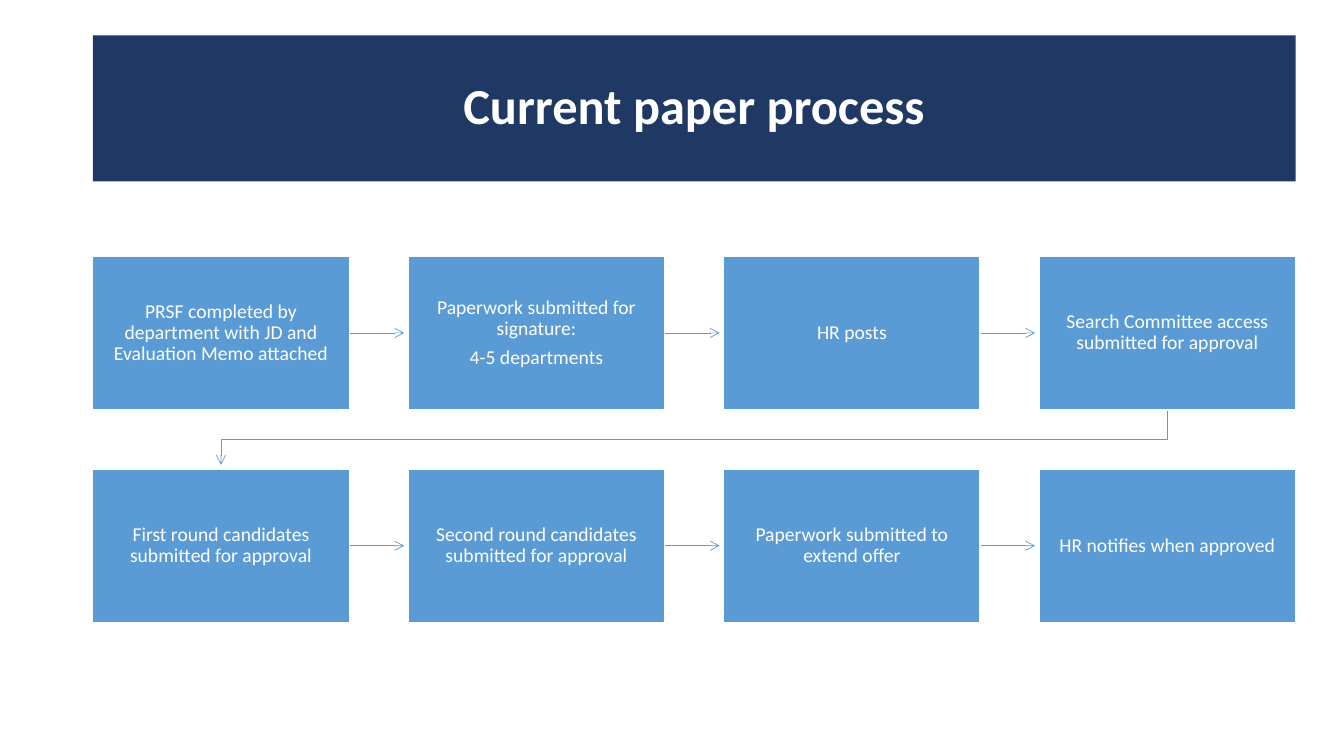
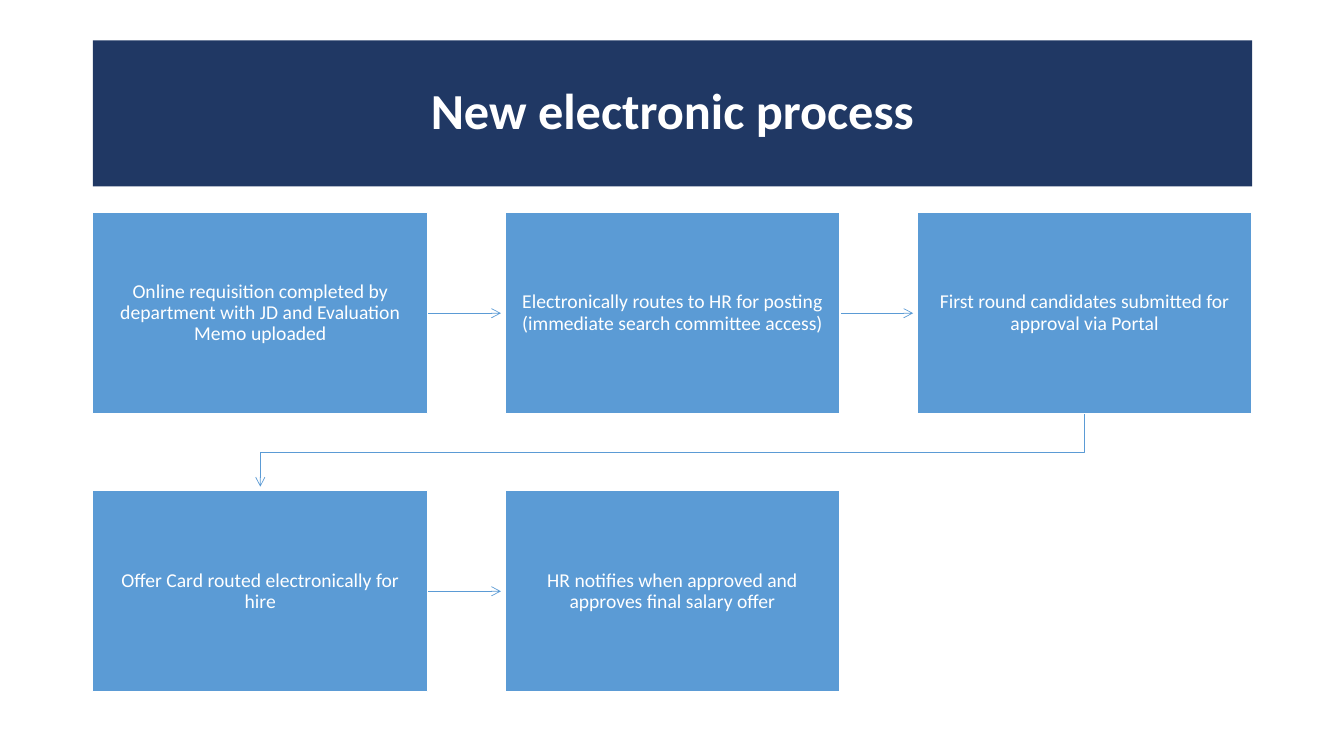
import pptx
import pptx.dml.color
import pptx.enum.shapes
import pptx.enum.text
import pptx.oxml.ns
import pptx.util
from lxml import etree

Inches, Pt = pptx.util.Inches, pptx.util.Pt
Kind = pptx.enum.shapes.MSO_SHAPE
COLORS = {"band": "203864", "step": "5B9BD5", "paper": "FFFFFF"}
LEFT = 0.92
GAP, RATIO = 0.23, 0.6  # gap and height as shares of a step's width
TIP = 0.04  # space between an arrowhead and the next step

FONTS = {
    "title": {"name": "Calibri", "size": Pt(36), "bold": True},
    "step": {"name": "Calibri", "size": Pt(14), "bold": False},
}
PARA = {"alignment": pptx.enum.text.PP_ALIGN.CENTER, "line_spacing": 0.9}
FRAME = {"word_wrap": True, "vertical_anchor": pptx.enum.text.MSO_ANCHOR.MIDDLE,
         "auto_size": pptx.enum.text.MSO_AUTO_SIZE.NONE}
INSETS = {"margin_" + side: Inches(0.11)
          for side in ("left", "top", "right", "bottom")}

SLIDES = [
    {"title": "Current paper process", "band": (0.35, 11.93), "top": 2.54, "cols": 4,
     "steps": ["PRSF completed by department with JD and Evaluation Memo attached",
               "Paperwork submitted for signature:\n4-5 departments",
               "HR posts",
               "Search Committee access submitted for approval",
               "First round candidates submitted for approval",
               "Second round candidates submitted for approval",
               "Paperwork submitted to extend offer",
               "HR notifies when approved"]},
    {"title": "New electronic process", "band": (0.4, 11.5), "top": 2.11, "cols": 3,
     "steps": ["Online requisition completed by department with JD and Evaluation Memo uploaded",
               "Electronically routes to HR for posting (immediate search committee access)",
               "First round candidates submitted for approval via Portal",
               "Offer Card routed electronically for hire",
               "HR notifies when approved and approves final salary offer"]},
]


def style(target, values):
    for name, value in values.items():
        setattr(target, name, value)


def rgb(name):
    return pptx.dml.color.RGBColor.from_string(COLORS[name])


def paint(shape, name):
    shape.fill.solid()
    shape.fill.fore_color.rgb = rgb(name)


def write(shape, text, font, **para):
    frame = shape.text_frame
    frame.text = text
    style(frame, FRAME)
    for line in frame.paragraphs:
        style(line, {**PARA, **para})
        for run in line.runs:
            style(run.font, FONTS[font])
            run.font.color.rgb = rgb("paper")


def band(slide, text, top, width):
    title = slide.shapes.title
    style(title, {"left": Inches(LEFT), "top": Inches(top),
                  "width": Inches(width), "height": Inches(1.45)})
    paint(title, "band")
    write(title, text, "title")


def step(slide, text, x, y, w, h):
    box = slide.shapes.add_shape(Kind.RECTANGLE, *map(Inches, (x, y, w, h)))
    box.shadow.inherit = False
    paint(box, "step")
    box.line.color.rgb = rgb("paper")
    box.line.width = Pt(1)
    write(box, text, "step", space_after=Pt(5))
    style(box.text_frame, INSETS)


def arrow(slide, points):
    """Draw a straight connector through two points, or a bent line through more."""
    spots = [(Inches(x), Inches(y)) for x, y in points]
    if len(spots) == 2:
        line = slide.shapes.add_connector(
            pptx.enum.shapes.MSO_CONNECTOR.STRAIGHT, *spots[0], *spots[1])
    else:
        pen = slide.shapes.build_freeform(*spots[0])
        pen.add_line_segments(spots[1:], close=False)
        line = pen.convert_to_shape()
        line.fill.background()
    line.line.color.rgb = rgb("step")
    line.line.width = Pt(0.5)
    props = line._element.spPr
    tail = etree.SubElement(line.line._get_or_add_ln(), pptx.oxml.ns.qn("a:tailEnd"))
    tail.set("type", "arrow")
    etree.SubElement(props, pptx.oxml.ns.qn("a:effectLst"))


def flow(slide, steps, cols, x, y, width):
    """Lay steps out in rows of cols and join each one to the next."""
    w = width / (cols + GAP * (cols - 1))
    h, gap = RATIO * w, GAP * w
    spots = [(x + i % cols * (w + gap), y + i // cols * (h + gap))
             for i in range(len(steps))]
    for (ax, ay), (bx, by) in zip(spots, spots[1:]):
        if ay == by:
            arrow(slide, [(ax + w, ay + h / 2), (bx - TIP, by + h / 2)])
        else:
            start, end, bend = ax + w / 2, bx + w / 2, ay + h + gap / 2
            arrow(slide, [(start, ay + h), (start, bend),
                          (end, bend), (end, by - TIP)])
    for text, (sx, sy) in zip(steps, spots):
        step(slide, text, sx, sy, w, h)


def main():
    deck = pptx.Presentation()
    style(deck, {"slide_width": Inches(13.33), "slide_height": Inches(7.5)})
    for data in SLIDES:
        slide = deck.slides.add_slide(deck.slide_layouts.get_by_name("Title Only"))
        top, width = data["band"]
        band(slide, data["title"], top, width)
        flow(slide, data["steps"], data["cols"], LEFT, data["top"], width)
    deck.save("out.pptx")


if __name__ == "__main__":
    main()
